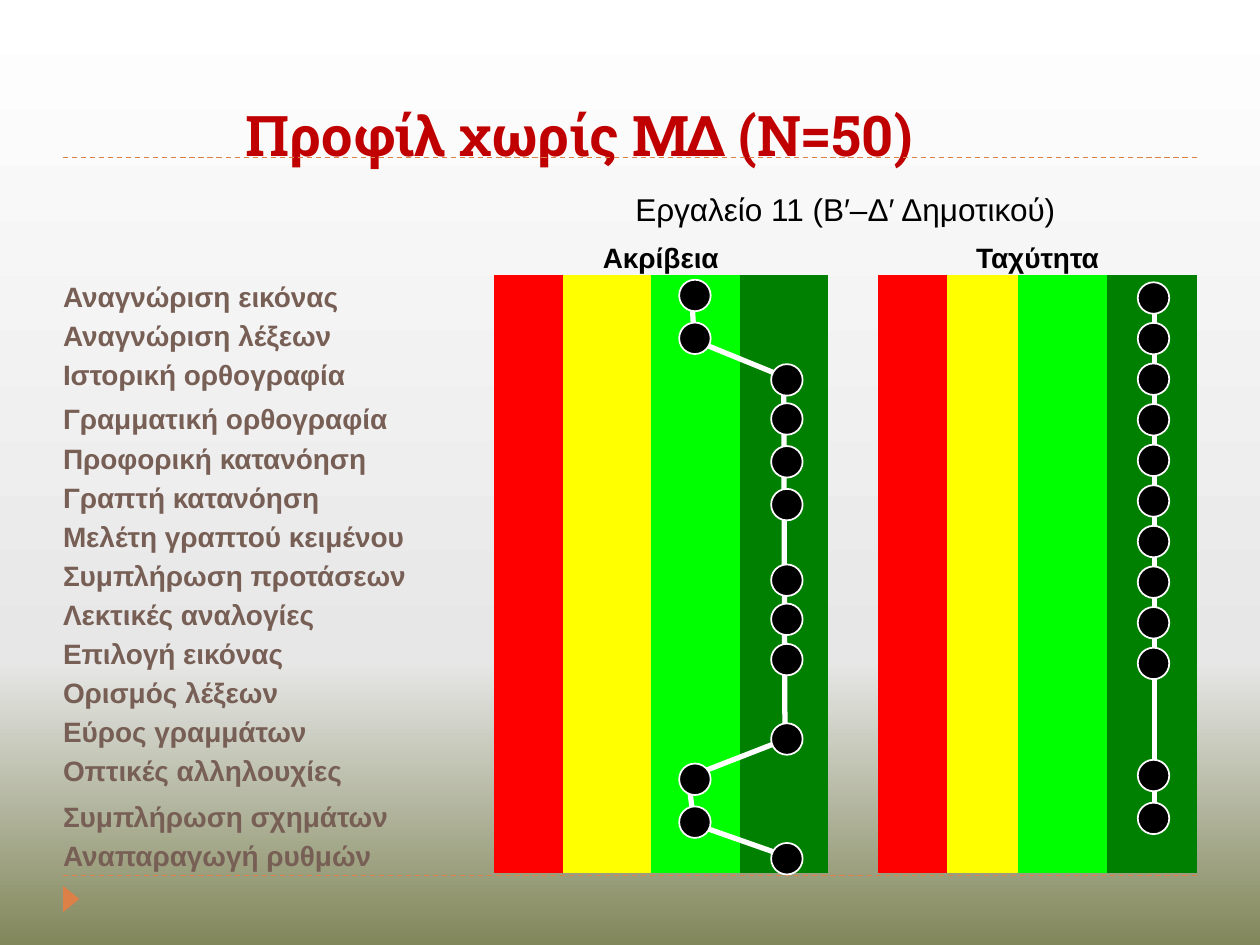
from copy import deepcopy
from itertools import pairwise

from lxml.etree import SubElement
from pptx import Presentation
from pptx.dml.color import RGBColor
from pptx.enum.dml import MSO_LINE
from pptx.enum.shapes import MSO_CONNECTOR, MSO_SHAPE
from pptx.enum.text import MSO_ANCHOR, PP_ALIGN
from pptx.oxml.ns import qn
from pptx.util import Inches, Pt

BLACK = RGBColor(0x00, 0x00, 0x00)
WHITE = RGBColor(0xFF, 0xFF, 0xFF)
BROWN = RGBColor(0x77, 0x5F, 0x55)
ORANGE = RGBColor(0xDD, 0x80, 0x47)
TITLE_RED = RGBColor(0xC0, 0x00, 0x00)
BACKGROUND = [(0, RGBColor(0x81, 0x87, 0x5A)),
              (0.3, RGBColor(0xE7, 0xE7, 0xE7)),
              (1, WHITE)]
BANDS = [RGBColor(0xFF, 0x00, 0x00), RGBColor(0xFF, 0xFF, 0x00),
         RGBColor(0x00, 0xFF, 0x00), RGBColor(0x00, 0x80, 0x00)]

TITLE_FONT = dict(name="Roboto Slab", size=Pt(32), bold=True)
CAPTION_FONT = dict(name="Arial", size=Pt(18), bold=False)
LABEL_FONT = dict(name="Arial", size=Pt(16), bold=True)
NO_STYLE_NO_GRID = "{2D5ABB26-0587-4C30-8999-92F81FD0307C}"

TASKS = ["Αναγνώριση εικόνας", "Αναγνώριση λέξεων", "Ιστορική ορθογραφία",
         "Γραμματική ορθογραφία", "Προφορική κατανόηση", "Γραπτή κατανόηση",
         "Μελέτη γραπτού κειμένου", "Συμπλήρωση προτάσεων",
         "Λεκτικές αναλογίες", "Επιλογή εικόνας", "Ορισμός λέξεων",
         "Εύρος γραμμάτων", "Οπτικές αλληλουχίες", "Συμπλήρωση σχημάτων",
         "Αναπαραγωγή ρυθμών"]
COLUMNS = [3.42, 0.55, 0.7, 0.7, 0.7, 0.4, 0.55, 0.56, 0.71, 0.71]
ROWS = [0.4] + [0.31] * 4 + [0.35] + [0.31] * 9 + [0.37, 0.31]
BAND_STARTS = (1, 6)

DOT = 0.25
MIDDLE, HIGH = 5.39, 6.12
ACCURACY_DOTS = ([(MIDDLE, y) for y in (2.22, 2.56, 6.06, 6.4)]
                 + [(HIGH, y) for y in (2.89, 3.2, 3.54, 3.88, 4.48, 4.79,
                                        5.11, 5.74, 6.69)])
ACCURACY_PATH = [(5.49, 2.35), (5.51, 2.7), (6.22, 2.99), (6.23, 5.87),
                 (5.46, 6.17), (5.51, 6.54), (6.25, 6.8)]
SPEED_STEP = (5.14 - 2.24) / 9
SPEED_DOTS = [(9.03, y) for y in
              [2.24 + i * SPEED_STEP for i in range(10)] + [6.03, 6.37]]
SPEED_PATH = [(9.16, 2.35), (9.16, 6.52)]


def set_attributes(target, values):
    for name, value in values.items():
        setattr(target, name, value)


def add_line(s, start, end, color, width, dash=None):
    line = s.shapes.add_connector(MSO_CONNECTOR.STRAIGHT,
                                  *map(Inches, (*start, *end)))
    line.line.color.rgb = color
    line.line.width = Pt(width)
    if dash:
        line.line.dash_style = dash
    SubElement(line._element.spPr, qn("a:effectLst"))


def add_solid(s, kind, box, color):
    sp = s.shapes.add_shape(kind, *map(Inches, box))
    sp.shadow.inherit = False
    sp.fill.solid()
    sp.fill.fore_color.rgb = color
    sp.line.fill.background()
    return sp


def paint_background(s):
    fill = s.background.fill
    fill.gradient()
    fill.gradient_angle = 90
    stops = next(s._element.iter(qn("a:gsLst")))
    stops.append(deepcopy(stops[-1]))
    for stop, (position, color) in zip(fill.gradient_stops, BACKGROUND):
        stop.position = position
        stop.color.rgb = color


def add_decoration(s, left, right):
    for y in (6.95, 1.25):
        add_line(s, (left, y), (right, y), ORANGE, 0.75, MSO_LINE.DASH)
    marker = add_solid(s, MSO_SHAPE.ISOSCELES_TRIANGLE,
                       (left - 0.04, 7.07, 0.21, 0.13), ORANGE)
    marker.rotation = 90


def set_title(s, text, box):
    title = s.shapes.title
    set_attributes(title, dict(zip(("left", "top", "width", "height"),
                                   map(Inches, box))))
    tf = title.text_frame
    tf.text = text
    tf.vertical_anchor = MSO_ANCHOR.BOTTOM
    p = tf.paragraphs[0]
    p.alignment = PP_ALIGN.LEFT
    set_attributes(p.runs[0].font, TITLE_FONT)
    p.runs[0].font.color.rgb = TITLE_RED


def write_cell(cell, text, font, color, align=PP_ALIGN.LEFT):
    cell.text = text
    p = cell.text_frame.paragraphs[0]
    p.alignment = align
    set_attributes(p.runs[0].font, font)
    p.runs[0].font.color.rgb = color


def add_profile_table(s, box):
    """Task names on the left, two groups of coloured score bands beside them."""
    table = s.shapes.add_table(len(ROWS), len(COLUMNS),
                               *map(Inches, box)).table
    table.first_row = table.horz_banding = False
    table._tbl.tblPr.find(qn("a:tableStyleId")).text = NO_STYLE_NO_GRID
    for column, width in zip(table.columns, COLUMNS):
        column.width = Inches(width)
    for row, height in zip(table.rows, ROWS):
        row.height = Inches(height)
    for cell in table.iter_cells():
        set_attributes(cell, dict.fromkeys(
            ("margin_left", "margin_right", "margin_top", "margin_bottom"), 0))
        cell.vertical_anchor = MSO_ANCHOR.BOTTOM

    caption = table.cell(0, 1)
    caption.merge(table.cell(0, len(COLUMNS) - 1))
    caption.margin_top = caption.margin_bottom = Inches(0.06)
    write_cell(caption, "Εργαλείο 11 (Β′–Δ′ Δημοτικού)", CAPTION_FONT, BLACK,
               PP_ALIGN.CENTER)
    caption.text_frame.paragraphs[0].space_after = Pt(2.7)

    for start, heading in zip(BAND_STARTS, ("Ακρίβεια", "Ταχύτητα")):
        cell = table.cell(1, start)
        cell.merge(table.cell(1, start + len(BANDS) - 1))
        write_cell(cell, heading, LABEL_FONT, BLACK, PP_ALIGN.CENTER)

    for row, task in enumerate(TASKS, start=2):
        write_cell(table.cell(row, 0), task, LABEL_FONT, BROWN)
        for start in BAND_STARTS:
            for column, color in enumerate(BANDS, start=start):
                fill = table.cell(row, column).fill
                fill.solid()
                fill.fore_color.rgb = color


def add_profile(s, path, dots):
    for start, end in pairwise(path):
        add_line(s, start, end, WHITE, 3)
    for x, y in dots:
        dot = add_solid(s, MSO_SHAPE.OVAL, (x, y, DOT, DOT), BLACK)
        dot.line.color.rgb = WHITE
        dot.line.width = Pt(1)


def main():
    prs = Presentation()
    prs.slide_width, prs.slide_height = Inches(10), Inches(7.5)
    s = prs.slides.add_slide(prs.slide_layouts[5])
    paint_background(s)
    add_decoration(s, 0.5, 9.5)
    set_title(s, "Προφίλ χωρίς ΜΔ (Ν=50)", (1.85, 0.13, 7.65, 1.25))
    add_profile_table(s, (0.5, 1.47, sum(COLUMNS), sum(ROWS)))
    add_profile(s, ACCURACY_PATH, ACCURACY_DOTS)
    add_profile(s, SPEED_PATH, SPEED_DOTS)
    prs.save("out.pptx")


if __name__ == "__main__":
    main()
